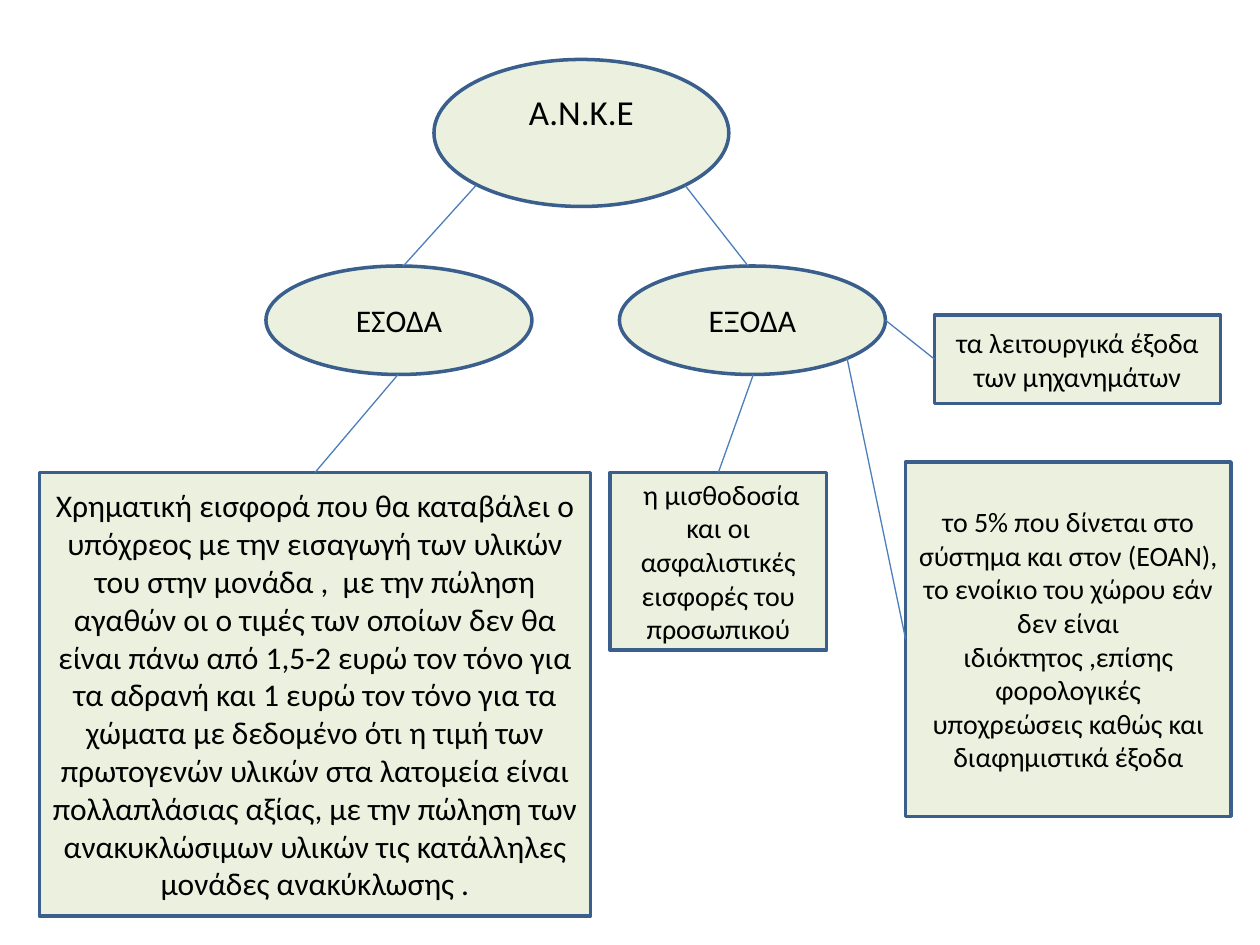
from pptx import Presentation
from pptx.dml.color import RGBColor
from pptx.enum import shapes, text
from pptx.oxml.ns import qn
from pptx.util import Pt
from lxml import etree

PALE_GREEN = RGBColor(0xEB, 0xF1, 0xDE)
OUTLINE_BLUE = RGBColor(0x3A, 0x5F, 0x8C)
LINK_BLUE = RGBColor(0x4B, 0x7E, 0xBC)
BLACK = RGBColor(0, 0, 0)

OVAL = shapes.MSO_SHAPE.OVAL
BOX = shapes.MSO_SHAPE.RECTANGLE
TOP, LEFT = 0, 1

presentation = Presentation()
presentation.slide_width = Pt(720)
presentation.slide_height = Pt(540)
slide = presentation.slides.add_slide(presentation.slide_layouts[6])


def add_node(kind, left, top, width, height, words, size):
    shape = slide.shapes.add_shape(kind, Pt(left), Pt(top), Pt(width), Pt(height))
    shape.shadow.inherit = False
    shape.fill.solid()
    shape.fill.fore_color.rgb = PALE_GREEN
    shape.line.color.rgb = OUTLINE_BLUE
    shape.line.width = Pt(2)
    frame = shape.text_frame
    frame.word_wrap = True
    frame.vertical_anchor = text.MSO_ANCHOR.MIDDLE
    frame.text = words
    paragraph = frame.paragraphs[0]
    paragraph.alignment = text.PP_ALIGN.CENTER
    font = paragraph.runs[0].font
    font.name = "Calibri"
    font.size = Pt(size)
    font.color.rgb = BLACK
    return shape


def add_link(start, end, box=None, side=TOP):
    """Draw a line between two points, joined to a side of box if one is given."""
    link = slide.shapes.add_connector(
        shapes.MSO_CONNECTOR.STRAIGHT, *(Pt(value) for value in start + end))
    link.line.color.rgb = LINK_BLUE
    link.line.width = Pt(0.75)
    etree.SubElement(link._element.spPr, qn("a:effectLst"))
    if box is not None:
        link.end_connect(box, side)


# Organisation and its two branches
organisation = add_node(OVAL, 248, 34, 168.5, 84, "Α.Ν.Κ.Ε", 20)
organisation.text_frame.margin_bottom = Pt(27.6)  # lifts the name above the centre
for left, words in ((152, "ΕΣΟΔΑ"), (354, "ΕΞΟΔΑ")):
    add_node(OVAL, left, 152, 152, 62, words, 18)
add_link((272, 106), (230.5, 152))
add_link((391.5, 106), (427.5, 152))

# Details: box place, words, text size, link start, side of the box joined
details = [
    ((22.5, 270, 315, 253.5),
     "Χρηματική εισφορά που θα καταβάλει ο υπόχρεος με την εισαγωγή των υλικών "
     "του στην μονάδα ,  με την πώληση αγαθών οι ο τιμές των οποίων δεν θα είναι "
     "πάνω από 1,5-2 ευρώ τον τόνο για τα αδρανή και 1 ευρώ τον τόνο για τα "
     "χώματα με δεδομένο ότι η τιμή των πρωτογενών υλικών στα λατομεία είναι "
     "πολλαπλάσιας αξίας, με την πώληση των ανακυκλώσιμων υλικών τις κατάλληλες "
     "μονάδες ανακύκλωσης .",
     18, (227.5, 214), TOP),
    ((348.5, 270, 124, 101.5),
     " η μισθοδοσία και οι ασφαλιστικές εισφορές του προσωπικού",
     16, (430.5, 214), TOP),
    ((534, 180, 163.5, 50.5),
     "τα λειτουργικά έξοδα των μηχανημάτων",
     16, (506, 183), LEFT),
    ((517.5, 264, 186, 202.5),
     "το 5% που δίνεται στο σύστημα και στον (ΕΟΑΝ), το ενοίκιο του χώρου εάν "
     "δεν είναι ιδιόκτητος ,επίσης φορολογικές υποχρεώσεις καθώς και "
     "διαφημιστικά έξοδα",
     16, (484, 204.5), LEFT),
]
for place, words, size, start, side in details:
    box = add_node(BOX, *place, words, size)
    add_link(start, place[:2], box, side)

presentation.save("out.pptx")
